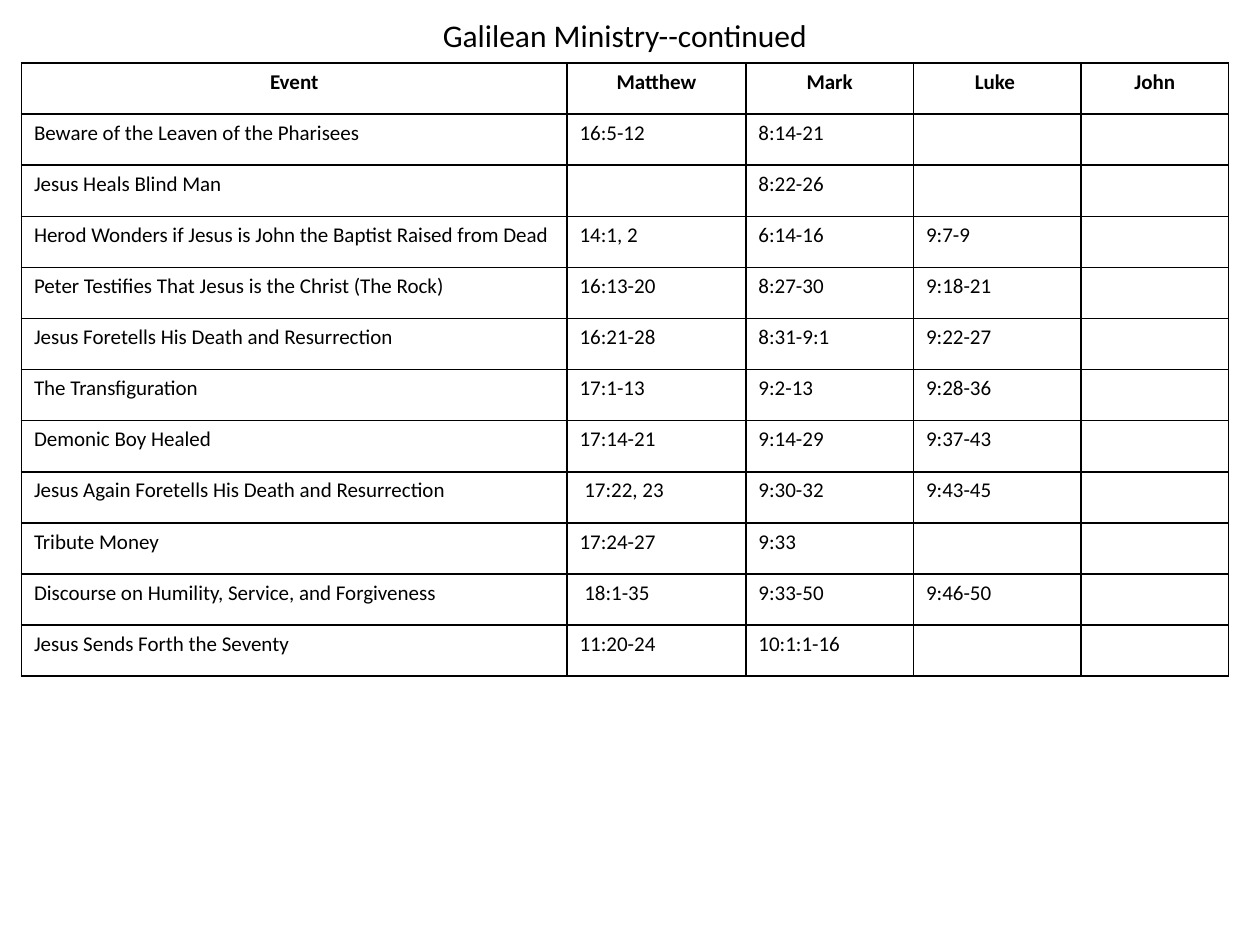
from dataclasses import dataclass

from lxml.etree import SubElement
from pptx import Presentation
from pptx.dml.color import RGBColor
from pptx.enum.text import MSO_ANCHOR as Anchor, PP_ALIGN as Align
from pptx.oxml.ns import qn
from pptx.util import Inches, Pt


@dataclass(frozen=True)
class Theme:
    font: str = "Calibri"
    ink: str = "000000"
    title_size: int = 18
    cell_size: int = 12
    border: int = 1


THEME = Theme()
COLUMN_WIDTHS = (4.33, 1.42, 1.33, 1.33, 1.17)
EVENTS = [
    ("Event", "Matthew", "Mark", "Luke ", "John"),
    ("Beware of the Leaven of the Pharisees", "16:5-12", "8:14-21", "", ""),
    ("Jesus Heals Blind Man", "", "8:22-26", "", ""),
    ("Herod Wonders if Jesus is John the Baptist Raised from Dead",
     "14:1, 2", "6:14-16", "9:7-9", ""),
    ("Peter Testifies That Jesus is the Christ (The Rock)",
     "16:13-20", "8:27-30", "9:18-21", ""),
    ("Jesus Foretells His Death and Resurrection",
     "16:21-28", "8:31-9:1", "9:22-27", ""),
    ("The Transfiguration", "17:1-13", "9:2-13", "9:28-36", ""),
    ("Demonic Boy Healed", "17:14-21", "9:14-29", "9:37-43", ""),
    ("Jesus Again Foretells His Death and Resurrection",
     " 17:22, 23", "9:30-32", "9:43-45", ""),
    ("Tribute Money", "17:24-27", "9:33", "", ""),
    ("Discourse on Humility, Service, and Forgiveness",
     " 18:1-35", "9:33-50", "9:46-50", ""),
    ("Jesus Sends Forth the Seventy", "11:20-24", "10:1:1-16", "", ""),
]


def write(frame, text, size, align, bold=False):
    para = frame.paragraphs[0]
    para.alignment = align
    span = para.add_run()
    span.text = text
    font_format = {"name": THEME.font, "size": Pt(size), "bold": bold}
    for name, value in font_format.items():
        setattr(span.font, name, value)
    span.font.color.rgb = RGBColor.from_string(THEME.ink)


def add_borders(cell):
    # Borders must come before the fill in the cell properties
    props = cell._tc.get_or_add_tcPr()
    for side in ("a:lnL", "a:lnR", "a:lnT", "a:lnB"):
        line = SubElement(props, qn(side), w=str(Pt(THEME.border)))
        fill = SubElement(line, qn("a:solidFill"))
        SubElement(fill, qn("a:srgbClr"), val=THEME.ink)


def place_title(page, box, text):
    title = page.shapes.title
    for name, value in zip(("left", "top", "width", "height"), box):
        setattr(title, name, value)
    frame = title.text_frame
    frame.word_wrap = True
    frame.vertical_anchor = Anchor.MIDDLE
    write(frame, text, THEME.title_size, Align.CENTER)


def place_events(page, box, rows):
    table = page.shapes.add_table(len(rows), len(rows[0]), *box).table
    table.first_row = table.horz_banding = False
    total = sum(COLUMN_WIDTHS)
    for column, width in zip(table.columns, COLUMN_WIDTHS):
        column.width = int(box[2] * width / total)
    for r, row in enumerate(rows):
        header = r == 0
        for c, text in enumerate(row):
            cell = table.cell(r, c)
            add_borders(cell)
            cell.fill.background()
            write(cell.text_frame, text, THEME.cell_size,
                  Align.CENTER if header else Align.LEFT, header)


def main():
    deck = Presentation()
    deck.slide_width, deck.slide_height = Inches(10), Inches(7.5)
    page = deck.slides.add_slide(deck.slide_layouts[5])
    left, width = Inches(0.17), Inches(9.58)

    # Heading above the table, both on the same margins
    place_title(page, (left, Inches(0.08), width, Inches(0.4)),
                "Galilean Ministry--continued")
    place_events(page, (left, Inches(0.5), width, Inches(4.87)), EVENTS)
    deck.save("out.pptx")


if __name__ == "__main__":
    main()
